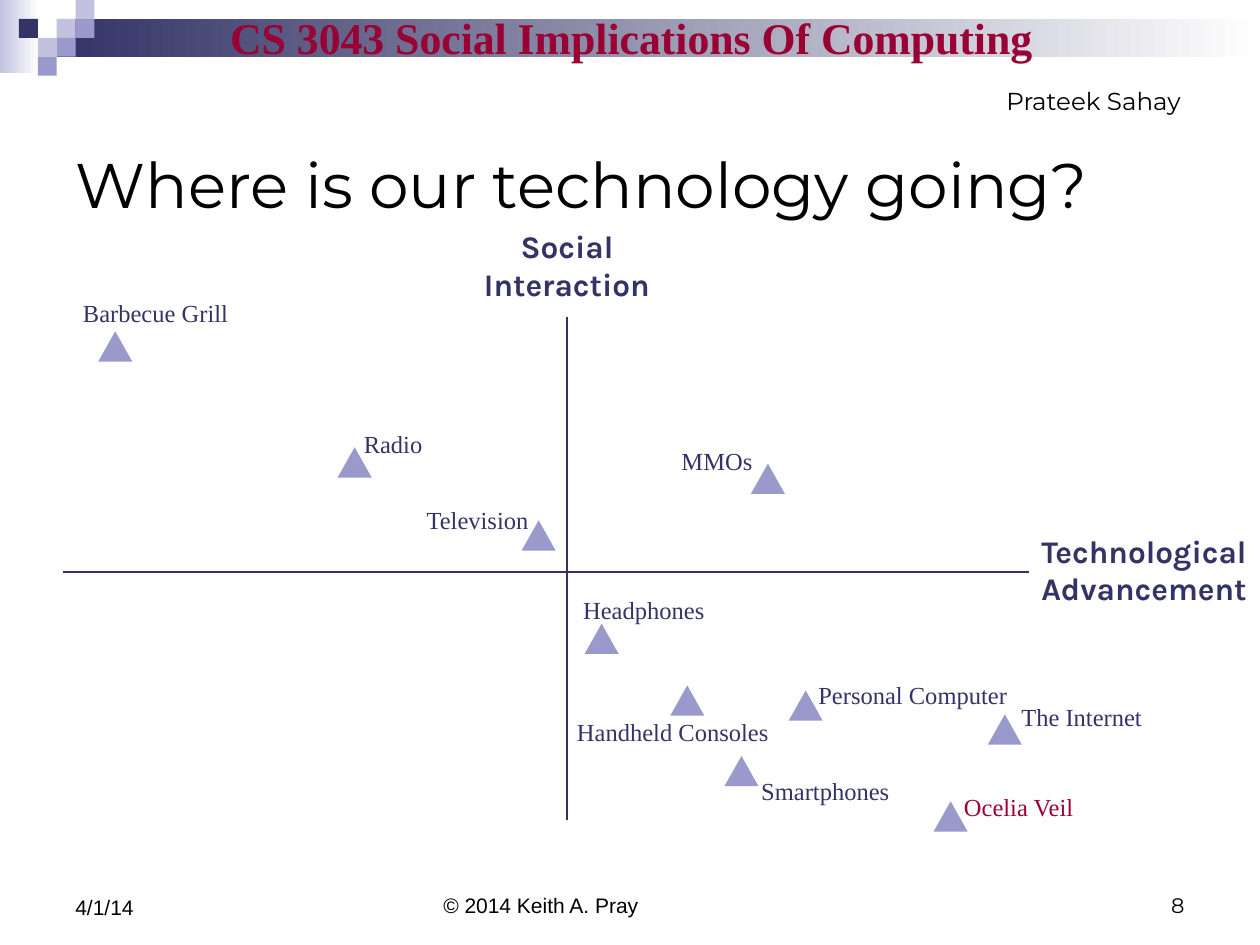
from lxml import etree
from pptx import Presentation
from pptx.dml.color import RGBColor
from pptx.enum.shapes import MSO_CONNECTOR, MSO_SHAPE
from pptx.enum.text import MSO_ANCHOR, PP_ALIGN
from pptx.oxml.ns import qn
from pptx.util import Inches, Pt

RECT, TRIANGLE = MSO_SHAPE.RECTANGLE, MSO_SHAPE.ISOSCELES_TRIANGLE
STRAIGHT = MSO_CONNECTOR.STRAIGHT
TOP, MIDDLE, BOTTOM = MSO_ANCHOR.TOP, MSO_ANCHOR.MIDDLE, MSO_ANCHOR.BOTTOM
LEFT, CENTER, RIGHT = PP_ALIGN.LEFT, PP_ALIGN.CENTER, PP_ALIGN.RIGHT

COLORS = {
    "navy": "333366",
    "lavender": "9999CC",
    "pale": "C2C2E0",
    "white": "FFFFFF",
    "crimson": "990033",
    "black": "000000",
}
RGB = {name: RGBColor.from_string(value) for name, value in COLORS.items()}
SERIF, SANS, HEAD, AXIS = "Times New Roman", "Arial", "Montserrat", "Karla"

prs = Presentation()
prs.slide_width, prs.slide_height = Inches(10), Inches(7.5)
s = prs.slides.add_slide(prs.slide_layouts[5])


def add_shape(kind, x, y, w, h, color, fade=False):
    sp = s.shapes.add_shape(kind, Inches(x), Inches(y), Inches(w), Inches(h))
    sp.shadow.inherit = False
    sp.line.fill.background()
    if fade:
        sp.fill.gradient()
        sp.fill.gradient_angle = 0
        for stop, name in zip(sp.fill.gradient_stops, (color, "white")):
            stop.color.rgb = RGB[name]
    else:
        sp.fill.solid()
        sp.fill.fore_color.rgb = RGB[color]


def add_text(sp, text, size, font, color="black", align=CENTER, anchor=TOP,
             bold=False, wrap=True):
    tf = sp.text_frame
    tf.word_wrap = wrap
    tf.vertical_anchor = anchor
    p = tf.paragraphs[0]
    p.alignment = align
    r = p.add_run()
    r.text = text
    r.font.size, r.font.name, r.font.bold = Pt(size), font, bold
    r.font.color.rgb = RGB[color]


# Header band and checker squares
add_shape(RECT, 0, 0, 0.31, 0.58, "pale", fade=True)
add_shape(RECT, 0.45, 0.15, 9.55, 0.3, "navy", fade=True)
SQUARE = 0.15
for col, row, color in [
    (3, 1, "pale"), (4, 0, "pale"), (4, 1, "lavender"), (2, 2, "pale"),
    (1, 1, "navy"), (3, 2, "lavender"), (2, 3, "lavender"),
]:
    add_shape(RECT, col * SQUARE, row * SQUARE, SQUARE, SQUARE, color)

# Title
title = s.shapes.title
title.left, title.top = Inches(0.5), Inches(0.83)
title.width, title.height = Inches(9), Inches(1.25)
add_text(title, "Where is our technology going?", 36, HEAD, align=LEFT,
         anchor=MIDDLE)

# Course name, footer, author and axis names
for x, y, w, h, text, size, font, style in [
    (1.72, 0.03, 6.58, 0.52, "CS 3043 Social Implications Of Computing", 25,
     SERIF, dict(color="crimson", anchor=MIDDLE, bold=True, wrap=False)),
    (3.42, 6.83, 3.17, 0.5, "© 2014 Keith A. Pray", 12, SANS,
     dict(align=LEFT, anchor=BOTTOM)),
    (0.5, 6.83, 2.33, 0.52, "4/1/14", 12, SANS,
     dict(align=LEFT, anchor=BOTTOM)),
    (7.17, 6.83, 2.33, 0.5, "8", 12, HEAD, dict(align=RIGHT, anchor=BOTTOM)),
    (7.49, 0.63, 2.38, 0.34, "Prateek Sahay", 14, HEAD, {}),
    (8.08, 4.17, 2, 0.71, "Technological Advancement", 18, AXIS,
     dict(color="navy", bold=True)),
    (3.71, 1.75, 1.58, 0.71, "Social Interaction", 18, AXIS,
     dict(color="navy", bold=True)),
]:
    sp = s.shapes.add_textbox(Inches(x), Inches(y), Inches(w), Inches(h))
    add_text(sp, text, size, font, **style)

# Axes
for x1, y1, x2, y2 in [(0.5, 4.54, 8.17, 4.54), (4.5, 6.51, 4.5, 2.52)]:
    axis = s.shapes.add_connector(STRAIGHT, Inches(x1), Inches(y1),
                                  Inches(x2), Inches(y2))
    axis.line.color.rgb = RGB["navy"]
    axis.line.width = Pt(1.5)
    etree.SubElement(axis._element.spPr, qn("a:effectLst"))

# Technologies: label, label left, top and width, marker left and top
for text, x, y, w, mark_x, mark_y, color in [
    ("Barbecue Grill", 0.5, 2.32, 1.47, 0.78, 2.63, "navy"),
    ("Radio", 2.46, 3.36, 1.32, 2.68, 3.55, "navy"),
    ("Television", 3.13, 3.96, 1.32, 4.14, 4.13, "navy"),
    ("MMOs", 5.03, 3.49, 1.32, 5.96, 3.68, "navy"),
    ("Headphones", 4.45, 4.67, 1.32, 4.64, 4.95, "navy"),
    ("Handheld Consoles", 4.45, 5.64, 1.78, 5.32, 5.44, "navy"),
    ("Personal Computer", 6.39, 5.35, 1.71, 6.26, 5.48, "navy"),
    ("The Internet", 7.73, 5.52, 1.71, 7.84, 5.67, "navy"),
    ("Smartphones", 5.74, 6.11, 1.62, 5.75, 6, "navy"),
    ("Ocelia Veil", 7.42, 6.24, 1.33, 7.41, 6.36, "crimson"),
]:
    add_shape(TRIANGLE, mark_x, mark_y, 0.27, 0.24, "lavender")
    sp = s.shapes.add_textbox(Inches(x), Inches(y), Inches(w), Inches(0.34))
    add_text(sp, text, 14, SERIF, color)

prs.save("out.pptx")
